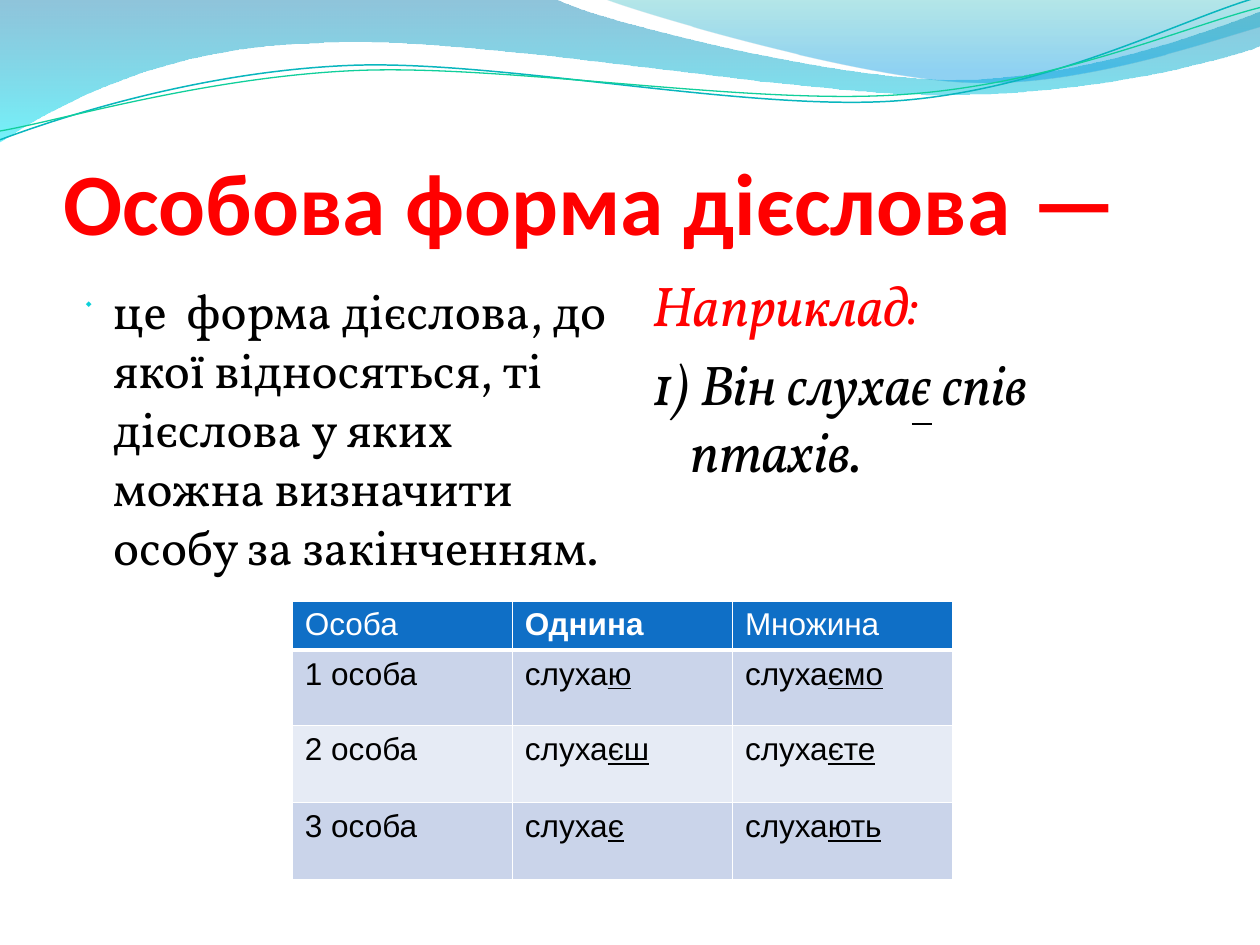
from lxml import etree
from pptx import Presentation
from pptx.dml.color import RGBColor
from pptx.enum.text import MSO_ANCHOR, MSO_AUTO_SIZE, PP_ALIGN
from pptx.oxml.ns import qn
from pptx.util import Inches, Pt

LEFT = PP_ALIGN.LEFT
TOP = MSO_ANCHOR.TOP
BOTTOM = MSO_ANCHOR.BOTTOM
NO_AUTOFIT = MSO_AUTO_SIZE.NONE
TITLE_ONLY = 5
COLUMNS, ROWS = 100, 75

COLORS = {
    "white": "FFFFFF", "black": "000000", "red": "FF0000",
    "bullet": "0BD0D9", "header": "0F6FC6",
    "band_dark": "CAD4EA", "band_light": "E6EBF5",
    "steel": "0079AD", "aqua": "00E9F7", "teal": "00ABB4", "sky": "0099E4",
    "line_teal": "09B6BE", "line_green": "10CF9B",
}

WAVES = [
    ([(0, 0), (44, -0.1), (47.6, 1.7, 66.4, 6.3, 75.8, 6.3),
      (85.3, 6.3, 95.8, 2.6, 100, 0.9), (100.1, 3.6),
      (98.3, 4.4, 87, 7.6, 74.6, 7.5), (62.2, 7.5, 38.2, 2.8, 25.7, 3.4),
      (12.9, 3.6, 4.6, 8.3, -0.1, 11.3)],
     [(0, "steel", 44), (100, "aqua", 55)]),
    ([(47.9, -0.1), (50.9, 1.1, 68.2, 6.2, 76.9, 6.5),
      (85.6, 6.9, 96.1, 3.2, 100, 2.1), (100, 0)],
     [(0, "teal", 29), (80, "sky", 44), (100, "sky", 44)]),
]
STRANDS = [
    ([(0, 11.1), (4.8, 9.3, 15.8, 5.7, 27.7, 5.2),
      (39.5, 4.7, 59.3, 8.9, 71.3, 8), (83.3, 7.1, 93.8, 1.5, 99.8, -0.2)],
     "line_teal", 0.85),
    ([(0, 10.4), (4.7, 9.6, 16.4, 6.1, 28.3, 5.6),
      (40.3, 5.1, 59.7, 8.4, 71.7, 7.5), (83.6, 6.7, 94.1, 2.1, 100, 0.6)],
     "line_green", 0.75),
]
VERB_STEM = "слуха"
HEADINGS = [("Особа", False), ("Однина", True), ("Множина", False)]
ENDINGS = [("1 особа", "ю", "ємо"), ("2 особа", "єш", "єте"), ("3 особа", "є", "ють")]


def write(paragraph, text, font, size, color, bold=False, italic=False, underline=False):
    run = paragraph.add_run()
    run.text = text
    run.font.name = font
    run.font.size = Pt(size)
    run.font.color.rgb = RGBColor.from_string(COLORS[color])
    run.font.bold, run.font.italic, run.font.underline = bold, italic, underline


def add_color(parent, color):
    solid = etree.SubElement(parent, qn("a:srgbClr"))
    solid.set("val", COLORS[color])
    return solid


def bend(shape, steps):
    segments = iter(shape._element.findall(".//" + qn("a:lnTo")))
    for step in steps:
        first = next(segments)
        if len(step) == 6:
            first.tag = qn("a:cubicBezTo")
            for _ in range(2):
                extra = next(segments)
                first.append(extra[0])
                extra.getparent().remove(extra)


class GrammarSlide:
    title_font, body_font, table_font = "Calibri", "Vollkorn", "Arial"

    def __init__(self, deck):
        self.column = deck.slide_width / COLUMNS
        self.row = deck.slide_height / ROWS
        self.slide = deck.slides.add_slide(deck.slide_layouts[TITLE_ONLY])

    def place(self, left, top, width, height):
        return (round(left * self.column), round(top * self.row),
                round(width * self.column), round(height * self.row))

    def outline(self, steps, close):
        points = [(round(step[i] * self.column), round(step[i + 1] * self.row))
                  for step in steps for i in range(0, len(step), 2)]
        builder = self.slide.shapes.build_freeform(*points[0])
        builder.add_line_segments(points[1:], close=close)
        shape = builder.convert_to_shape()
        bend(shape, steps[1:])
        shape.shadow.inherit = False
        return shape

    def wave(self, steps, stops):
        shape = self.outline(steps, True)
        shape.line.fill.background()
        shape.fill.gradient()
        shape.fill.gradient_angle = 270
        stop_list = shape._element.spPr.find(qn("a:gradFill")).find(qn("a:gsLst"))
        for old_stop in list(stop_list):
            stop_list.remove(old_stop)
        for position, color, opacity in stops:
            stop = etree.SubElement(stop_list, qn("a:gs"))
            stop.set("pos", str(position * 1000))
            alpha = etree.SubElement(add_color(stop, color), qn("a:alpha"))
            alpha.set("val", str(opacity * 1000))

    def strand(self, steps, color, width):
        shape = self.outline(steps, False)
        shape.fill.background()
        shape.line.color.rgb = RGBColor.from_string(COLORS[color])
        shape.line.width = Pt(width)

    def title(self, area, runs):
        heading = self.slide.shapes.title
        heading.left, heading.top, heading.width, heading.height = self.place(*area)
        frame = heading.text_frame
        frame.auto_size = NO_AUTOFIT
        frame.word_wrap = True
        frame.vertical_anchor = BOTTOM
        frame.margin_left = frame.margin_right = frame.margin_bottom = 0
        frame.paragraphs[0].alignment = LEFT
        for text, size in runs:
            write(frame.paragraphs[0], text, self.title_font, size, "red", bold=True)

    def body(self, area, paragraphs, size, bullet=None, italic=False):
        frame = self.slide.shapes.add_textbox(*self.place(*area)).text_frame
        frame.word_wrap = True
        frame.auto_size = NO_AUTOFIT
        frame.vertical_anchor = TOP
        for index, runs in enumerate(paragraphs):
            paragraph = frame.add_paragraph() if index else frame.paragraphs[0]
            properties = paragraph._p.get_or_add_pPr()
            properties.set("marL", str(Inches(0.3)))
            properties.set("indent", str(-Inches(0.3)))
            if bullet:
                add_color(etree.SubElement(properties, qn("a:buClr")), "bullet")
                etree.SubElement(properties, qn("a:buSzPct")).set("val", "95000")
                etree.SubElement(properties, qn("a:buFont")).set("typeface", "Wingdings 2")
                etree.SubElement(properties, qn("a:buChar")).set("char", bullet)
            paragraph.alignment = LEFT
            if index:
                paragraph.space_before = Pt(6.4)
            for text, color, underline in runs:
                write(paragraph, text, self.body_font, size, color,
                      italic=italic, underline=underline)

    def cell(self, cell, fill, runs, top_border=1, bottom_border=1):
        properties = cell._tc.get_or_add_tcPr()
        borders = {"lnL": 1, "lnR": 1, "lnT": top_border, "lnB": bottom_border}
        for side, width in borders.items():
            border = etree.SubElement(properties, qn(f"a:{side}"))
            border.set("w", str(Pt(width)))
            add_color(etree.SubElement(border, qn("a:solidFill")), "white")
        cell.fill.solid()
        cell.fill.fore_color.rgb = RGBColor.from_string(COLORS[fill])
        for text, style in runs:
            write(cell.text_frame.paragraphs[0], text, self.table_font, 18, **style)

    def verb_table(self, area, row_heights):
        table = self.slide.shapes.add_table(
            len(row_heights), len(HEADINGS), *self.place(*area)).table
        for row, height in zip(table.rows, row_heights):
            row.height = round(height * self.row)
        for column, (text, bold) in enumerate(HEADINGS):
            self.cell(table.cell(0, column), "header",
                      [(text, {"color": "white", "bold": bold})], bottom_border=3)
        plain = {"color": "black"}
        for row, (person, *endings) in enumerate(ENDINGS, 1):
            fill = "band_dark" if row % 2 else "band_light"
            top_border = 3 if row == 1 else 1
            self.cell(table.cell(row, 0), fill, [(person, plain)], top_border)
            for column, ending in enumerate(endings, 1):
                self.cell(table.cell(row, column), fill,
                          [(VERB_STEM, plain), (ending, {**plain, "underline": True})],
                          top_border)


def main():
    deck = Presentation()
    deck.slide_width, deck.slide_height = Inches(10), Inches(7.5)
    page = GrammarSlide(deck)
    for steps, stops in WAVES:
        page.wave(steps, stops)
    for steps, color, width in STRANDS:
        page.strand(steps, color, width)
    page.title((5, 7.7, 90, 12.5), [("Особова форма дієслова ", 50), ("—", 54)])
    page.body((5, 21.8, 44.2, 47.7),
              [[("це  форма дієслова, до якої відносяться, ті дієслова у яких "
                 "можна визначити особу за закінченням.", "black", False)]],
              28, bullet="⚫")
    page.body((50.8, 21, 44.2, 48.5),
              [[("Наприклад:", "red", False)],
               [("1) Він слуха", "black", False), ("є", "black", True),
                (" спів птахів.", "black", False)]],
              32, italic=True)
    page.verb_table((23.2, 47.7, 52.4, 22.1), (3.9, 6, 6.1, 6.1))
    deck.save("out.pptx")


if __name__ == "__main__":
    main()
